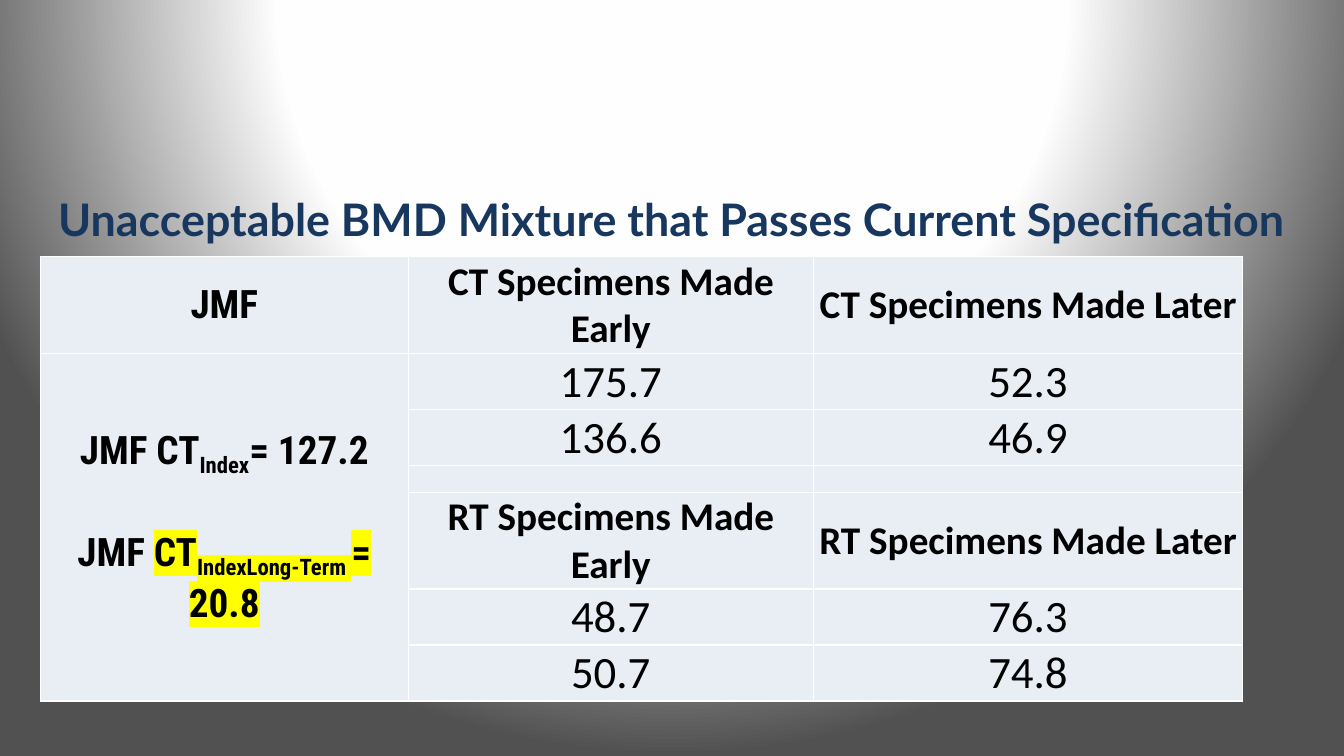
"""Build the slide on an unacceptable BMD mixture that passes the current specification."""
from dataclasses import dataclass

from lxml.etree import SubElement
from pptx import Presentation
from pptx.dml.color import RGBColor
from pptx.enum.text import MSO_ANCHOR, PP_ALIGN
from pptx.oxml import parse_xml
from pptx.oxml.ns import nsdecls, qn
from pptx.util import Pt

TITLE = "Unacceptable BMD Mixture that Passes Current Specification"
JMF_HEADING = "JMF"
JMF_LINES = [
    [("JMF CT", ""), ("Index", "sub"), ("= 127.2", "")],
    [("JMF ", ""), ("CT", "mark"), ("IndexLong-Term ", "sub mark"), ("= 20.8", "mark")],
]
SPECIMEN_ROWS = [
    ("CT Specimens Made Early", "CT Specimens Made Later"),
    ("175.7", "52.3"),
    ("136.6", "46.9"),
    ("", ""),
    ("RT Specimens Made Early", "RT Specimens Made Later"),
    ("48.7", "76.3"),
    ("50.7", "74.8"),
]
HEADING_ROWS = (0, 4)
COLUMN_WIDTHS = (262.8, 289.4, 306.7)
ROW_HEIGHTS = {"heading": 69, "value": 40, "gap": 19.3}
TABLE_LEFT, TABLE_TOP = 28.8, 183.4
TITLE_BOX = (8.6, 128.9, 942.5, 54.7)
GRADIENT_STOPS = [(0, "FFFFFF"), (51, "FEFEFE"), (98, "515151")]


@dataclass(frozen=True)
class Theme:
    """Hold the colours, fonts and type sizes."""
    title_color: str = "17375E"
    text_color: str = "000000"
    cell_color: str = "E9EDF4"
    border_color: str = "FFFFFF"
    highlight: str = "FFFF00"
    title_font: str = "Lato"
    jmf_font: str = "Roboto Condensed"
    data_font: str = "Calibri"
    large: int = 32
    medium: int = 28
    small: int = 12


THEME = Theme()


def add_run(paragraph, text, font, size, bold, color=THEME.text_color, marks=""):
    """Add one formatted run to a centred paragraph."""
    paragraph.alignment = PP_ALIGN.CENTER
    run = paragraph.add_run()
    run.text = text
    run.font.name = font
    run.font.size = Pt(size)
    run.font.bold = bold
    run.font.color.rgb = RGBColor.from_string(color)
    properties = run.font._element
    if "sub" in marks:
        properties.set("baseline", "-25000")
    if "mark" in marks:
        highlight = parse_xml(f'<a:highlight {nsdecls("a")}><a:srgbClr val="{THEME.highlight}"/></a:highlight>')
        properties.find(qn("a:solidFill")).addnext(highlight)


def set_background(slide):
    """Give the slide a circular gradient."""
    slide.background.fill.solid()
    stops = "".join(f'<a:gs pos="{position * 1000}"><a:srgbClr val="{color}"/></a:gs>'
                    for position, color in GRADIENT_STOPS)
    gradient = parse_xml(
        f'<a:gradFill {nsdecls("a")} rotWithShape="1"><a:gsLst>{stops}</a:gsLst>'
        '<a:path path="circle"><a:fillToRect l="50000" t="-80000" r="50000" b="180000"/>'
        '</a:path></a:gradFill>')
    solid = next(slide._element.iter(qn("a:solidFill")))
    solid.getparent().replace(solid, gradient)


def style_cell(cell):
    """Set the fill, margins, anchor and borders of a cell."""
    cell.fill.solid()
    cell.fill.fore_color.rgb = RGBColor.from_string(THEME.cell_color)
    cell.vertical_anchor = MSO_ANCHOR.MIDDLE
    cell.margin_left = cell.margin_right = cell.margin_top = Pt(0.7)
    cell.margin_bottom = Pt(0)
    properties = cell._tc.get_or_add_tcPr()
    for index, side in enumerate("LRTB"):
        properties.insert(index, parse_xml(
            f'<a:ln{side} {nsdecls("a")} w="{Pt(1)}"><a:solidFill>'
            f'<a:srgbClr val="{THEME.border_color}"/></a:solidFill></a:ln{side}>'))


def add_title(slide):
    """Add the slide title."""
    shape = slide.shapes.add_textbox(*map(Pt, TITLE_BOX))
    frame = shape.text_frame
    frame.word_wrap = True
    frame.vertical_anchor = MSO_ANCHOR.MIDDLE
    add_run(frame.paragraphs[0], TITLE, THEME.title_font, THEME.large, True, THEME.title_color)


def add_specimen_table(slide):
    """Add the table of mixture results."""
    heights = [ROW_HEIGHTS["heading" if index in HEADING_ROWS else "value" if row[0] else "gap"]
               for index, row in enumerate(SPECIMEN_ROWS)]
    table = slide.shapes.add_table(
        len(heights), len(COLUMN_WIDTHS), Pt(TABLE_LEFT), Pt(TABLE_TOP),
        Pt(sum(COLUMN_WIDTHS)), Pt(sum(heights))).table
    table.first_row = table.horz_banding = False
    for column, width in zip(table.columns, COLUMN_WIDTHS):
        column.width = Pt(width)
    for row, height in zip(table.rows, heights):
        row.height = Pt(height)
    for cell in table.iter_cells():
        style_cell(cell)

    for row_index, texts in enumerate(SPECIMEN_ROWS):
        heading = row_index in HEADING_ROWS
        size = THEME.medium if heading else THEME.large
        for column_index, text in enumerate(texts, 1):
            paragraph = table.cell(row_index, column_index).text_frame.paragraphs[0]
            if text:
                add_run(paragraph, text, THEME.data_font, size, heading)
            else:
                SubElement(paragraph._p, qn("a:endParaRPr"), sz=str(THEME.small * 100))

    add_run(table.cell(0, 0).text_frame.paragraphs[0], JMF_HEADING, THEME.jmf_font, THEME.medium, True)
    jmf_cell = table.cell(1, 0)
    jmf_cell.merge(table.cell(len(heights) - 1, 0))
    frame = jmf_cell.text_frame
    for index, line in enumerate(JMF_LINES):
        paragraph = frame.add_paragraph() if index else frame.paragraphs[0]
        if index:
            paragraph.space_before = Pt(36)
        for text, marks in line:
            add_run(paragraph, text, THEME.jmf_font, THEME.medium, True, marks=marks)


def main():
    """Build and save the presentation."""
    presentation = Presentation()
    presentation.slide_width, presentation.slide_height = Pt(960), Pt(540)
    slide = presentation.slides.add_slide(presentation.slide_layouts[6])
    set_background(slide)
    add_title(slide)
    add_specimen_table(slide)
    presentation.save("out.pptx")


if __name__ == "__main__":
    main()
